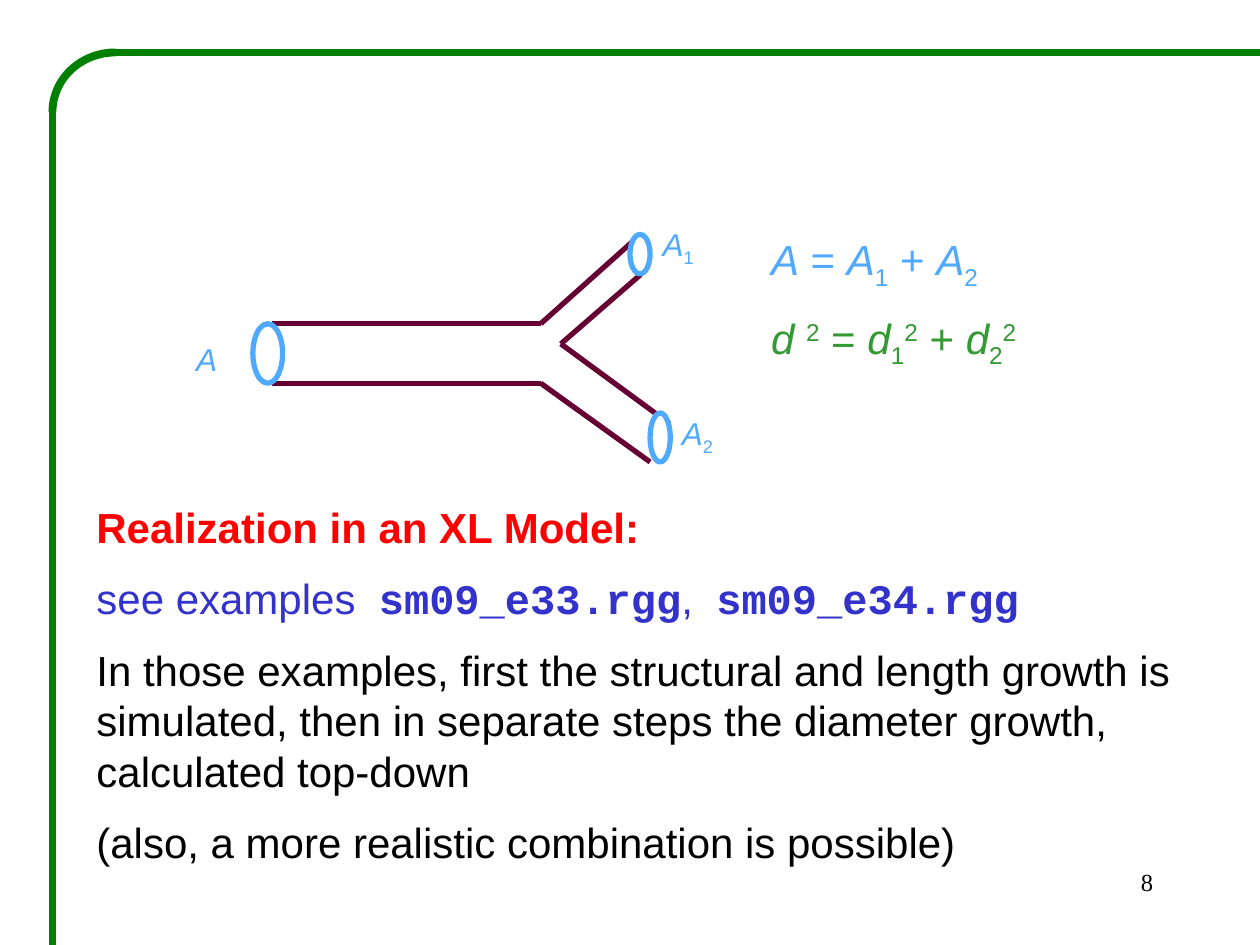
from pptx import Presentation
from pptx.dml.color import RGBColor
from pptx.enum.shapes import MSO_CONNECTOR, MSO_SHAPE
from pptx.enum.text import PP_ALIGN
from pptx.oxml.ns import qn
from pptx.util import Pt
from lxml import etree

STRAIGHT = MSO_CONNECTOR.STRAIGHT
OVAL, ARC = MSO_SHAPE.OVAL, MSO_SHAPE.ARC
LEFT, RIGHT = PP_ALIGN.LEFT, PP_ALIGN.RIGHT
WHITE = RGBColor(0xFF, 0xFF, 0xFF)
BLACK = RGBColor(0, 0, 0)
PLUM = RGBColor(0x66, 0x00, 0x33)
SKY = RGBColor(0x4F, 0xAA, 0xFD)
LEAF = RGBColor(0x33, 0x99, 0x33)
GREEN = RGBColor(0x00, 0x80, 0x00)
RED = RGBColor(0xFF, 0, 0)
BLUE = RGBColor(0x33, 0x33, 0xCC)

ITAL = dict(ital=True)
SUB = dict(base=-25)
SUP = dict(base=30)
CODE = dict(font="Courier New", bold=True)


def write(para, text, font="Arial", size=24, color=BLACK, bold=False, ital=False, base=0):
    run = para.add_run()
    run.text = text
    face = run.font
    face.name, face.size = font, Pt(size)
    face.bold, face.italic = bold, ital
    face.color.rgb = color
    if base:
        face._element.set("baseline", str(base * 1000))


class Sketch:
    def __init__(self, slide):
        self.slide = slide
        self.shapes = slide.shapes

    def line(self, start, end, color=PLUM, width=3):
        ends = [Pt(v) for v in (*start, *end)]
        item = self.shapes.add_connector(STRAIGHT, *ends)
        item.line.color.rgb = color
        item.line.width = Pt(width)
        etree.SubElement(item._element.spPr, qn("a:effectLst"))

    def shape(self, kind, box, color, width):
        item = self.shapes.add_shape(kind, *[Pt(v) for v in box])
        item.shadow.inherit = False
        item.line.color.rgb = color
        item.line.width = Pt(width)
        return item

    def ring(self, *box):
        item = self.shape(OVAL, box, SKY, 3)
        item.fill.solid()
        item.fill.fore_color.rgb = WHITE

    def bend(self, *box):
        item = self.shape(ARC, box, GREEN, 4.5)
        item.fill.background()
        item.adjustments[0] = 108
        item.adjustments[1] = 162

    def text(self, box, paras, size=24, gap=12, align=LEFT):
        frame = self.shapes.add_textbox(*[Pt(v) for v in box]).text_frame
        frame.word_wrap = True
        for i, (style, runs) in enumerate(paras):
            para = frame.add_paragraph() if i else frame.paragraphs[0]
            para.alignment = align
            para.line_spacing = Pt(size * 1.2)
            para.space_before = Pt(gap if i else 0)
            for words, extra in runs:
                write(para, words, **{"size": size, **style, **extra})


def main():
    deck = Presentation()
    deck.slide_width, deck.slide_height = Pt(720), Pt(540)
    art = Sketch(deck.slides.add_slide(deck.slide_layouts[6]))

    top, low, neck = 185, 219, 309
    fork = (320.5, 196.5)
    for y in (top, low):
        art.line((155.5, y), (neck, y))
    art.line((neck, top), (366, 134))
    art.line(fork, (366, 157))
    art.line((neck, low), (371.5, 264))
    art.line(fork, (382.5, 242))
    art.ring(144.5, top, 17, low - top)
    art.ring(371.5, 236, 11.5, 28)
    art.ring(360, 134, 11.5, 22.5)

    sky, leaf = dict(color=SKY), dict(color=LEAF)
    sums = [
        (sky, [("A", ITAL), (" = ", {}), ("A", ITAL), ("1", SUB),
               (" + ", {}), ("A", ITAL), ("2", SUB)]),
        (leaf, [("d ", ITAL), ("2", SUP), (" = ", {}),
                ("d", ITAL), ("1", SUB), ("2", SUP), (" + ", {}),
                ("d", ITAL), ("2", SUB), ("2", SUP)]),
    ]
    art.text((433.5, 134, 170, 80), sums, gap=16)

    for x, y, wide, mark in ((105, 191, 28, ""), (371.5, 128, 39.5, "1"),
                             (382.5, 236, 39.5, "2")):
        runs = [("A", ITAL)] + ([(mark, SUB)] if mark else [])
        art.text((x, y, wide, 29), [(sky, runs)], size=18)

    art.text((48, 283, 641, 242), [
        (dict(color=RED, bold=True), [("Realization in an XL Model:", {})]),
        (dict(color=BLUE), [("see examples  ", {}), ("sm09_e33.rgg", CODE),
                            (",  ", {}), ("sm09_e34.rgg", CODE)]),
        ({}, [("In those examples, first the structural and length growth is "
               "simulated, then in separate steps the diameter growth, "
               "calculated top-down", {})]),
        ({}, [("(also, a more realistic combination is possible)", {})]),
    ])

    edge = 30
    art.line((720, edge), (66, edge), GREEN, 4.5)
    art.line((edge, 60), (edge, 540), GREEN, 4.5)
    art.bend(edge, edge, 72, 68)
    page = dict(font="Times New Roman")
    art.text((516, 492, 150, 36), [(page, [("8", {})])], size=14, align=RIGHT)

    deck.save("out.pptx")


if __name__ == "__main__":
    main()
